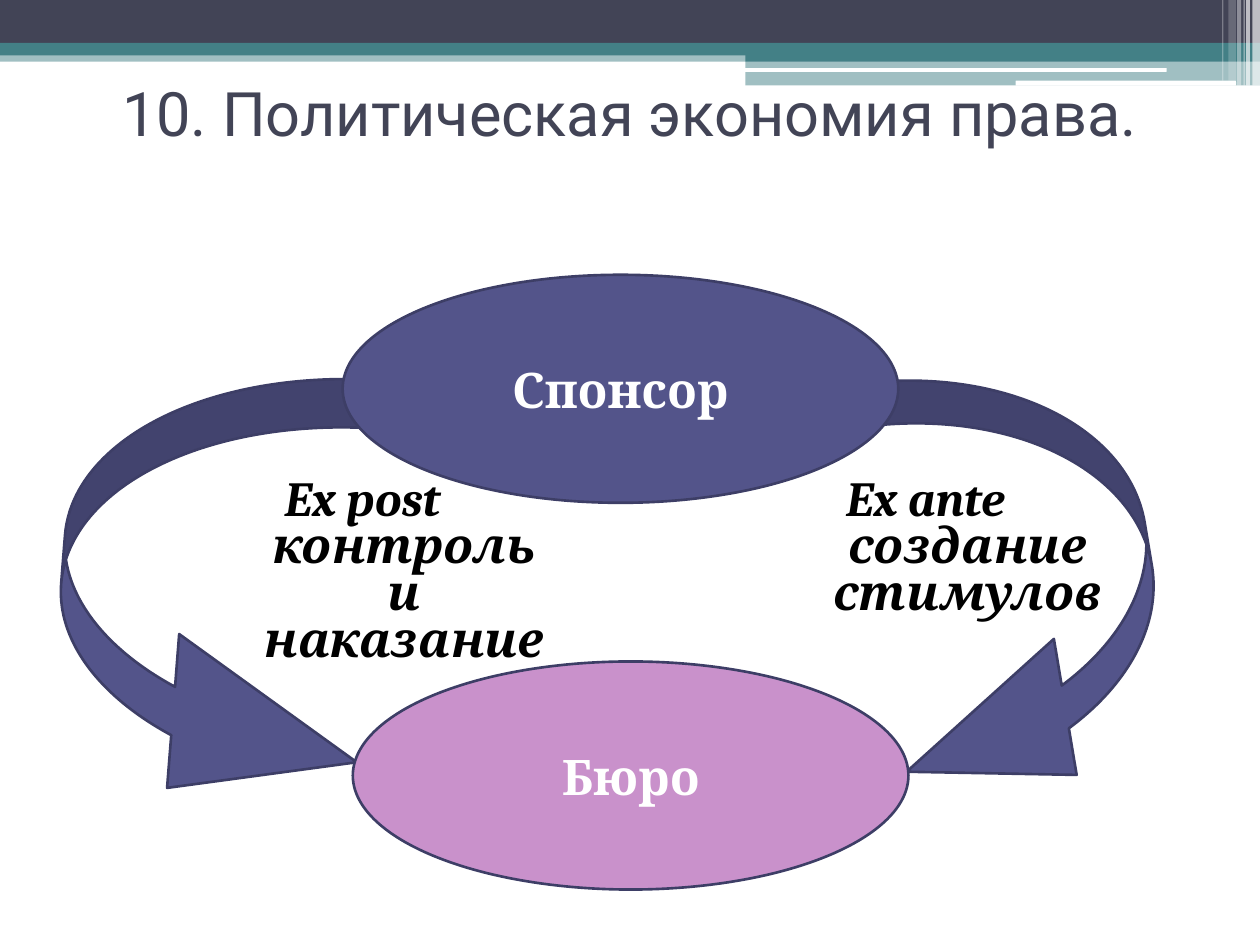
import pptx
import pptx.util
from lxml import etree
from pptx.dml.color import RGBColor
from pptx.enum.shapes import MSO_SHAPE
from pptx.enum.text import MSO_ANCHOR, PP_ALIGN
from pptx.oxml.ns import qn

Pt = pptx.util.Pt

WHITE = RGBColor(0xFF, 0xFF, 0xFF)
BLACK = RGBColor(0, 0, 0)
SLATE = RGBColor(0x42, 0x44, 0x56)
TEAL = RGBColor(0x43, 0x80, 0x86)
INDIGO = RGBColor(0x53, 0x54, 0x8A)
OUTLINE = RGBColor(0x3D, 0x3E, 0x66)
ORCHID = RGBColor(0xC9, 0x91, 0xCB)

WIDTH, HEIGHT = 720, 540
STEP_LEFT = 426
TITLE = "10. Политическая экономия права."

BANDS = [
    (0, 28.8, WIDTH, 6.5, TEAL, 50),
    (0, 0, WIDTH, 24.5, SLATE, 100),
    (0, 24.5, WIDTH, 7.2, TEAL, 100),
    (STEP_LEFT, 28.1, WIDTH - STEP_LEFT, 7.2, TEAL, 100),
    (STEP_LEFT, 35.2, WIDTH - STEP_LEFT, 13.6, TEAL, 50),
]
HIGHLIGHTS = [(425.5, 38.9, 241.2, 2.2), (580.3, 46.1, 126, 2.9)]
STRIPES = [
    (715.7, 4.3, 49, 65),
    (712.1, 2.2, 49, 65),
    (710.6, 0.7, 49, 60),
    (707, 2.2, 49, 40),
    (702, 4.3, 46.1, 20),
    (698.4, 0.7, 46.1, 30),
]
ARROWS = [
    ((34.6, 210.2, 176.4, 262.8), 4.5, True),
    ((501.8, 205.9, 157.7, 262.8), 350.5, False),
]
ARROW_ADJUSTMENTS = (0.157, 0.5, 0.606)
OVAL_SIZE = (317.5, 130.3)
OVALS = [
    ("Спонсор", (195.8, 157), INDIGO),
    ("Бюро", (201.6, 378), ORCHID),
]
CAPTIONS = [
    ("Ex post контроль и наказание", (93.6, 270, 226.8, 108)),
    ("Ex ante создание стимулов", (414, 270, 229.7, 90.7)),
]
HANGING = 48


def add_shape(page, kind, frame, color, opacity=100, outlined=False):
    shape = page.shapes.add_shape(kind, *map(Pt, frame))
    shape.shadow.inherit = False
    shape.fill.solid()
    shape.fill.fore_color.rgb = color
    if opacity < 100:
        solid = shape.fill._xPr.find(qn("a:solidFill"))
        etree.SubElement(solid[0], qn("a:alpha"), val=str(opacity * 1000))
    if outlined:
        shape.line.color.rgb = OUTLINE
        shape.line.width = Pt(1.5)
    else:
        shape.line.fill.background()
    return shape


def write(shape, text, font, size, color, bold=False, italic=False):
    frame = shape.text_frame
    frame.word_wrap = True
    para = frame.paragraphs[0]
    para.alignment = PP_ALIGN.CENTER
    span = para.add_run()
    span.text = text
    span.font.name = font
    span.font.size = Pt(size)
    span.font.color.rgb = color
    span.font.bold = bold
    span.font.italic = italic
    return para


def add_header(page):
    for *frame, color, opacity in BANDS:
        add_shape(page, MSO_SHAPE.RECTANGLE, frame, color, opacity)
    for frame in HIGHLIGHTS:
        add_shape(page, MSO_SHAPE.ROUNDED_RECTANGLE, frame, WHITE)
    for left, width, height, opacity in STRIPES:
        add_shape(page, MSO_SHAPE.RECTANGLE, (left, 0, width, height), WHITE, opacity)


def add_arrows(page):
    for frame, rotation, mirrored in ARROWS:
        arrow = add_shape(page, MSO_SHAPE.CURVED_LEFT_ARROW, frame, INDIGO, outlined=True)
        for index, value in enumerate(ARROW_ADJUSTMENTS):
            arrow.adjustments[index] = value
        arrow.rotation = rotation
        if mirrored:
            arrow._element.spPr.find(qn("a:xfrm")).set("flipH", "1")


def add_ovals(page):
    for text, corner, color in OVALS:
        oval = add_shape(page, MSO_SHAPE.OVAL, corner + OVAL_SIZE, color, outlined=True)
        oval.text_frame.vertical_anchor = MSO_ANCHOR.MIDDLE
        write(oval, text, "Cambria", 28, WHITE, bold=True)


def add_captions(page):
    for text, frame in CAPTIONS:
        box = page.shapes.add_textbox(*map(Pt, frame))
        para = write(box, text, "Cambria", 28, BLACK, bold=True, italic=True)
        para.line_spacing = 0.8
        para.space_before = Pt(3)
        properties = para._p.get_or_add_pPr()
        properties.set("marL", str(Pt(HANGING)))
        properties.set("indent", str(-Pt(HANGING)))


def add_title(page):
    box = page.shapes.add_textbox(Pt(0), Pt(33.8), Pt(WIDTH), Pt(60.5))
    box.text_frame.vertical_anchor = MSO_ANCHOR.MIDDLE
    write(box, TITLE, "Roboto", 35, SLATE)


def main():
    deck = pptx.Presentation()
    deck.slide_width, deck.slide_height = Pt(WIDTH), Pt(HEIGHT)
    page = deck.slides.add_slide(deck.slide_layouts[6])
    add_header(page)
    add_arrows(page)
    add_ovals(page)
    add_captions(page)
    add_title(page)
    deck.save("out.pptx")


if __name__ == "__main__":
    main()
